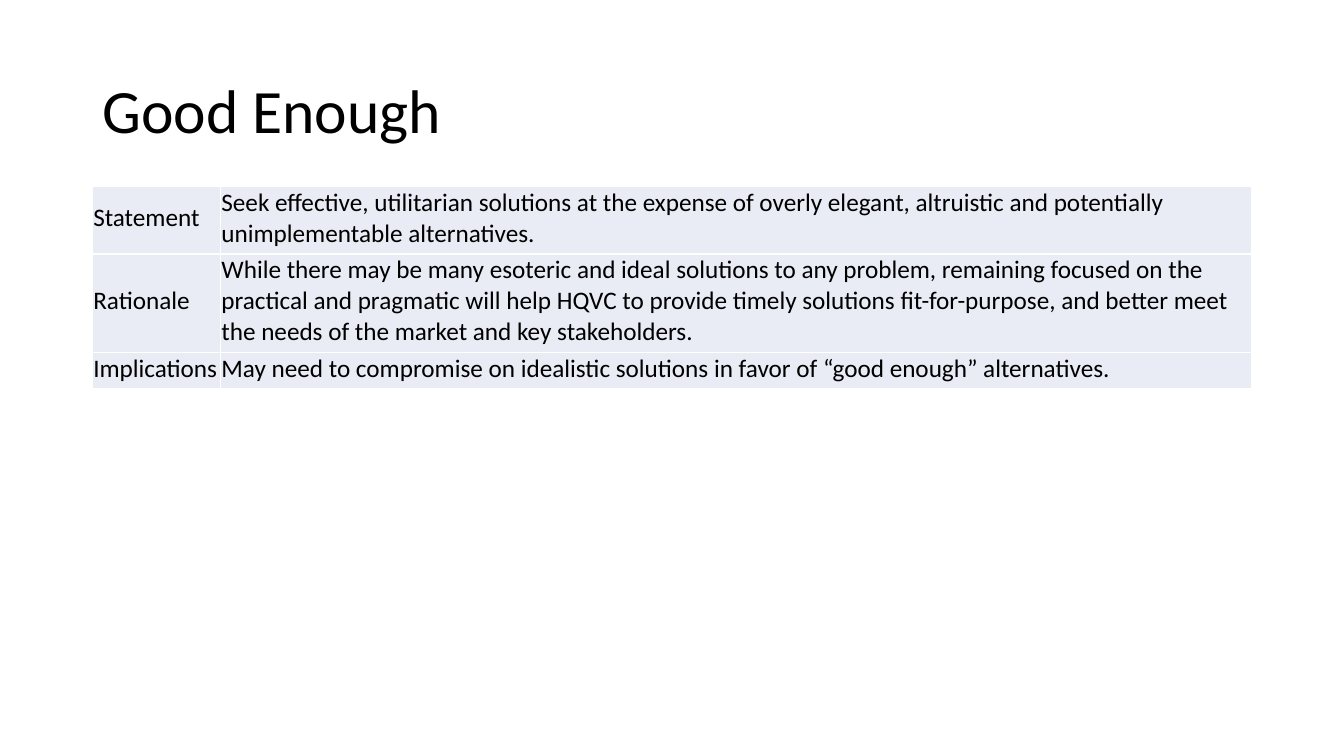
from dataclasses import dataclass

from lxml.etree import SubElement
from pptx import Presentation
from pptx.dml.color import RGBColor
from pptx.enum.text import MSO_ANCHOR as Anchor, PP_ALIGN as Align
from pptx.oxml.ns import qn
from pptx.table import _Cell as Cell
from pptx.text.text import TextFrame
from pptx.util import Cm, Pt


@dataclass(frozen=True)
class Theme:
    font: str = "Calibri"
    ink: str = "000000"
    cell_fill: str = "E9EBF5"
    border: str = "FFFFFF"
    border_width: int = Pt(1)
    title_size: int = 44
    cell_size: int = 18


@dataclass(frozen=True)
class Principle:
    label: str
    detail: str
    height: float


THEME = Theme()
LEFT, WIDTH = 2.33, 29.21
COLUMN_WIDTHS = (3.23, 25.98)
PRINCIPLES = (
    Principle(
        "Statement",
        "Seek effective, utilitarian solutions at the expense of overly elegant, "
        "altruistic and potentially unimplementable alternatives.",
        1.66,
    ),
    Principle(
        "Rationale",
        "While there may be many esoteric and ideal solutions to any problem, "
        "remaining focused on the practical and pragmatic will help HQVC to provide "
        "timely solutions fit-for-purpose, and better meet the needs of the market "
        "and key stakeholders.",
        2.42,
    ),
    Principle(
        "Implications",
        "May need to compromise on idealistic solutions in favor of “good enough” "
        "alternatives.",
        0.9,
    ),
)


def write(frame: TextFrame, text: str, *, size: int, spacing: float = 1.0) -> None:
    frame.word_wrap = True
    paragraph = frame.paragraphs[0]
    paragraph.alignment = Align.LEFT
    paragraph.line_spacing = spacing
    run = paragraph.add_run()
    run.text = text
    run.font.name = THEME.font
    run.font.size = Pt(size)
    run.font.color.rgb = RGBColor.from_string(THEME.ink)


def add_borders(cell: Cell) -> None:
    properties = cell._tc.get_or_add_tcPr()
    for side in ("lnL", "lnR", "lnT", "lnB"):
        line = SubElement(properties, qn(f"a:{side}"), w=str(THEME.border_width))
        fill = SubElement(line, qn("a:solidFill"))
        SubElement(fill, qn("a:srgbClr"), val=THEME.border)


def fill_cell(cell: Cell, text: str) -> None:
    add_borders(cell)
    cell.fill.solid()
    cell.fill.fore_color.rgb = RGBColor.from_string(THEME.cell_fill)
    cell.vertical_anchor = Anchor.MIDDLE
    cell.margin_left = cell.margin_right = cell.margin_top = Cm(0.02)
    cell.margin_bottom = Cm(0.13)
    write(cell.text_frame, text, size=THEME.cell_size)


def main() -> None:
    deck = Presentation()
    deck.slide_width, deck.slide_height = Cm(33.87), Cm(19.05)
    slide = deck.slides.add_slide(deck.slide_layouts[5])

    # Title
    title = slide.shapes.title
    title.left, title.top = Cm(LEFT), Cm(1.01)
    title.width, title.height = Cm(WIDTH), Cm(3.68)
    title.text_frame.vertical_anchor = Anchor.MIDDLE
    write(title.text_frame, "Good Enough", size=THEME.title_size, spacing=0.9)

    # Principle table
    table_height = sum(principle.height for principle in PRINCIPLES)
    principles = slide.shapes.add_table(
        len(PRINCIPLES), len(COLUMN_WIDTHS),
        Cm(LEFT), Cm(4.7), Cm(WIDTH), Cm(table_height),
    ).table
    principles.first_row = principles.horz_banding = False
    for column, width in zip(principles.columns, COLUMN_WIDTHS):
        column.width = Cm(width)
    for row, principle in zip(principles.rows, PRINCIPLES):
        row.height = Cm(principle.height)
        for cell, text in zip(row.cells, (principle.label, principle.detail)):
            fill_cell(cell, text)

    deck.save("out.pptx")


if __name__ == "__main__":
    main()
